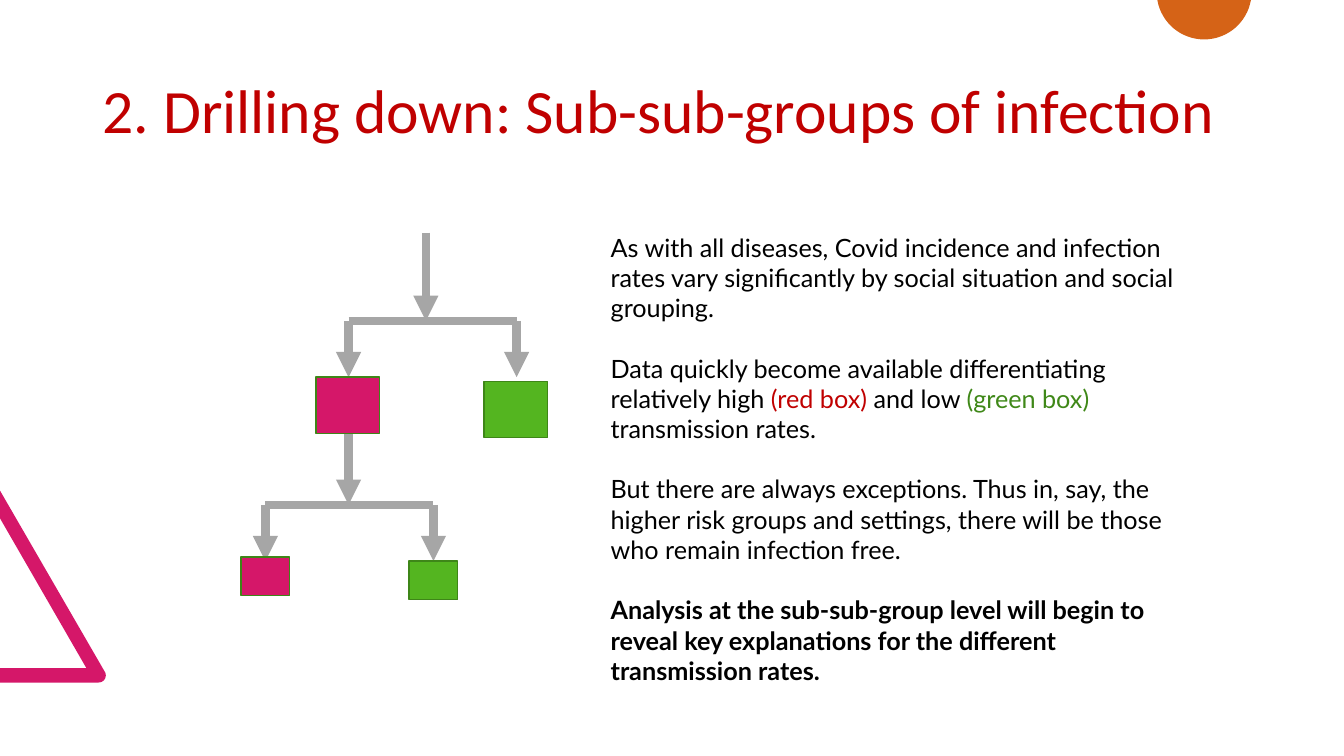
from math import cos, radians, sin

from lxml.etree import SubElement
from pptx import Presentation
from pptx.dml.color import RGBColor
from pptx.enum.shapes import MSO_CONNECTOR, MSO_SHAPE
from pptx.enum.text import MSO_ANCHOR, MSO_AUTO_SIZE, PP_ALIGN
from pptx.oxml.ns import qn
from pptx.util import Inches, Pt

COLS, ROWS = 160, 90
RED, GREEN, DARK_GREEN = "D51769", "54B520", "3E8618"
ORANGE, GREY, TITLE_RED, BLACK = "D56317", "A6A6A6", "C00000", "000000"

TITLE = "2. Drilling down: Sub-sub-groups of infection"
PARAGRAPHS = [
    [("As with all diseases, Covid incidence and infection rates vary "
      "significantly by social situation and social grouping.", {})],
    [("Data quickly become available differentiating relatively high ", {}),
     ("(red box) ", {"color": TITLE_RED}),
     ("and low ", {}),
     ("(green box) ", {"color": "3F8818"}),
     ("transmission rates.", {})],
    [("But there are always exceptions. Thus in, say, the higher risk groups "
      "and settings, there will be those who remain infection free.", {})],
    [("Analysis at the sub-sub-group level will begin to reveal key "
      "explanations for the different transmission rates.", {"bold": True})],
]


def rgb(value):
    return RGBColor.from_string(value)


def arc(cx, cy, radius, start, end, step=5):
    """Points on a circle, angles in degrees clockwise from the right."""
    angles = [radians(a) for a in range(start, end + 1, step)]
    return [(cx + radius * cos(a), cy + radius * sin(a)) for a in angles]


class Deck:
    def __init__(self):
        self.prs = Presentation()
        self.prs.slide_width, self.prs.slide_height = Inches(13.33), Inches(7.5)
        self.slide = self.prs.slides.add_slide(self.prs.slide_layouts[1])
        self.shapes = self.slide.shapes

    def x(self, cols):
        return round(self.prs.slide_width * cols / COLS)

    def y(self, rows):
        return round(self.prs.slide_height * rows / ROWS)

    def paint(self, sp, fill, line=None):
        sp.shadow.inherit = False
        sp.fill.solid()
        sp.fill.fore_color.rgb = rgb(fill)
        if line:
            sp.line.color.rgb = rgb(line)
            sp.line.width = Pt(1)
        else:
            sp.line.fill.background()

    def outline(self, points, fill):
        start, *rest = [(self.x(c), self.y(r)) for c, r in points]
        builder = self.shapes.build_freeform(*start)
        builder.add_line_segments(rest, close=True)
        self.paint(builder.convert_to_shape(), fill)

    def box(self, col, row, width, height, fill):
        sp = self.shapes.add_shape(MSO_SHAPE.RECTANGLE, self.x(col), self.y(row),
                                   self.x(width), self.y(height))
        self.paint(sp, fill, DARK_GREEN)

    def line(self, x1, y1, x2, y2, arrow=False):
        cn = self.shapes.add_connector(MSO_CONNECTOR.STRAIGHT, self.x(x1),
                                       self.y(y1), self.x(x2), self.y(y2))
        cn.line.color.rgb = rgb(GREY)
        cn.line.width = Pt(6)
        if arrow:
            SubElement(cn.line._get_or_add_ln(), qn("a:tailEnd"), type="triangle")
        SubElement(cn._element.spPr, qn("a:effectLst"))

    def split(self, stem, top, bar, left, width=20, drop=6.7):
        """A stem arrow that meets a bar with an arrow down from each end."""
        right = left + width
        self.line(stem, top, stem, bar, arrow=True)
        self.line(left, bar, right, bar)
        for end in (left, right):
            self.line(end, bar, end, bar + drop, arrow=True)

    def box_pair(self, col, row, width, height):
        self.box(col, row, width, height, RED)
        self.box(col + 20, row + 0.5, width, height, GREEN)

    def text(self, sp, area, paragraphs, font, anchor, para):
        """Fill a placeholder; each paragraph is a list of (text, format)."""
        col, row, width, height = area
        sp.left, sp.top = self.x(col), self.y(row)
        sp.width, sp.height = self.x(width), self.y(height)
        tf = sp.text_frame
        tf.word_wrap, tf.auto_size = True, MSO_AUTO_SIZE.NONE
        tf.vertical_anchor = anchor
        for i, runs in enumerate(paragraphs):
            p = tf.add_paragraph() if i else tf.paragraphs[0]
            for name, value in para.items():
                setattr(p, name, value)
            p.space_before = Pt(0)
            pPr = p._p.get_or_add_pPr()
            pPr.set("marL", "0")
            pPr.set("indent", "0")
            SubElement(pPr, qn("a:buNone"))
            for content, extra in runs:
                r = p.add_run()
                r.text = content
                style = {**font, **extra}
                r.font.color.rgb = rgb(style.pop("color"))
                for name, value in style.items():
                    setattr(r.font, name, value)


def main():
    deck = Deck()
    title, body = deck.shapes.title, deck.slide.placeholders[1]

    deck.outline([(0, 58.4), *arc(11.75, 80.4, 0.85, -30, 90), (0, 81.25),
                  (0, 79.55), (10.3, 79.55), (0, 61.7)], RED)
    deck.outline(arc(143.35, -0.95, 5.65, 10, 170), ORANGE)

    deck.text(title, (11, 4.8, 138, 17.4), [[(TITLE, {})]],
              {"name": "Calibri", "size": Pt(44), "color": TITLE_RED},
              MSO_ANCHOR.MIDDLE, {"alignment": PP_ALIGN.LEFT, "line_spacing": 0.9})

    deck.split(stem=50.7, top=27.7, bar=38.2, left=41.5)
    deck.split(stem=41.5, top=51.4, bar=60.1, left=31.6)
    deck.box_pair(37.6, 44.9, 7.6, 6.7)
    deck.box_pair(28.7, 66.3, 5.8, 4.6)

    deck.text(body, (71.5, 27, 70.4, 63), PARAGRAPHS,
              {"name": "Lato", "size": Pt(18), "color": BLACK}, MSO_ANCHOR.TOP,
              {"alignment": PP_ALIGN.LEFT, "space_after": Pt(21.6)})

    deck.prs.save("out.pptx")


if __name__ == "__main__":
    main()
